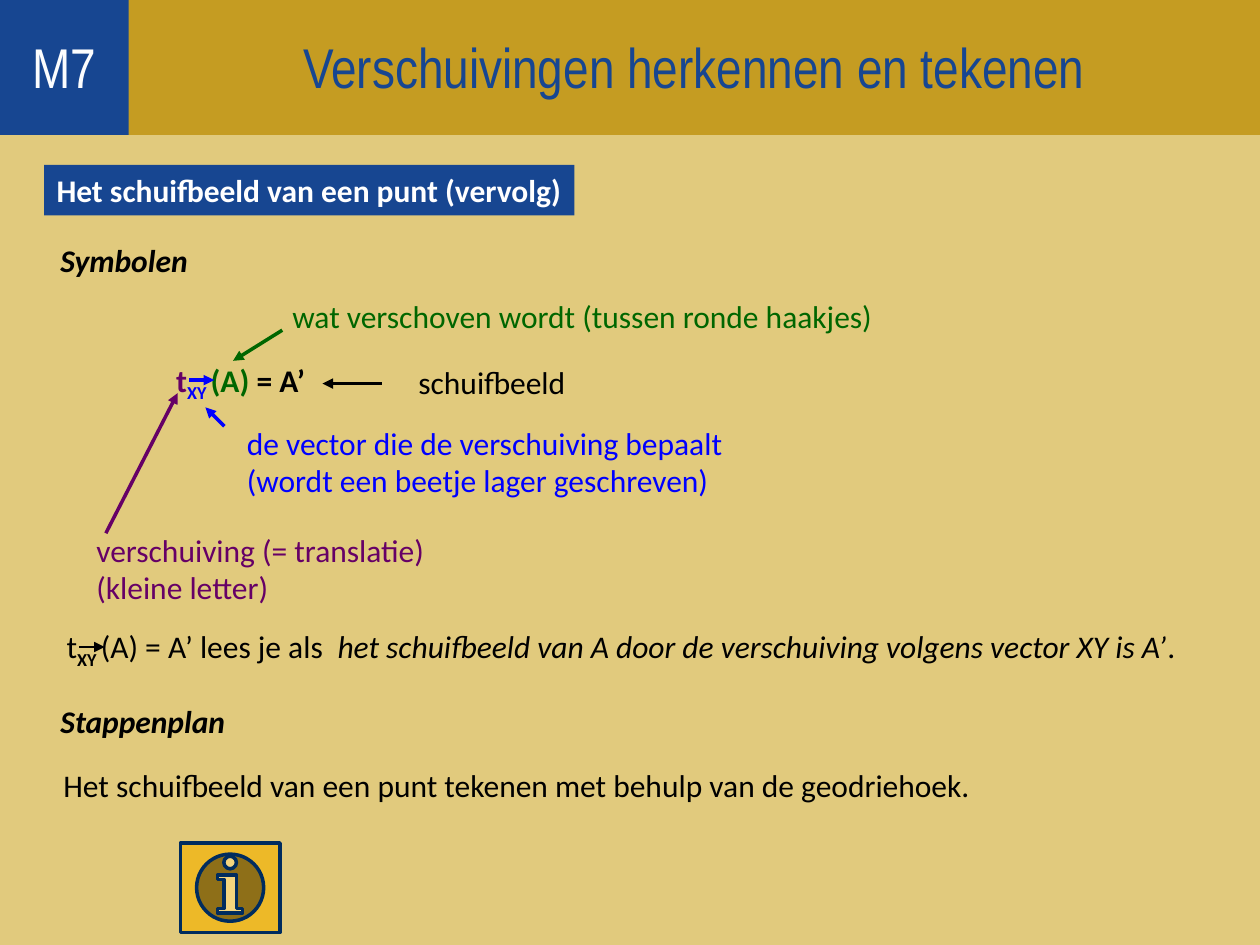
import pptx
import pptx.dml.color
import pptx.enum.shapes
import pptx.enum.text
import pptx.oxml
import pptx.util
from pptx.oxml.ns import qn
from pptx.util import Pt

COLORS = {
    "sand": "E1CA7D", "gold": "C59C22", "navy": "174691", "white": "FFFFFF",
    "off_white": "FCFDFE", "black": "000000", "purple": "660066",
    "green": "006600", "blue": "0000FF", "button": "EDB928", "button_line": "002C5E",
}
LINE_HEIGHT = 28.8
SHAPES = pptx.enum.shapes.MSO_SHAPE


def rgb(name):
    return pptx.dml.color.RGBColor.from_string(COLORS[name])


def fill_with(shape, color):
    shape.fill.solid()
    shape.fill.fore_color.rgb = rgb(color)


def style(font, color, size=18, name="Calibri", bold=False, italic=False):
    font.name, font.size = name, Pt(size)
    font.bold, font.italic = bold, italic
    font.color.rgb = rgb(color)


def add_block(page, kind, left, top, width, height, fill):
    """Add a filled preset shape without outline or shadow."""
    block = page.shapes.add_shape(kind, Pt(left), Pt(top), Pt(width), Pt(height))
    block.shadow.inherit = False
    fill_with(block, fill)
    block.line.fill.background()
    return block


def add_label(page, left, top, width, lines, color="black", wrap=False, **look):
    height = LINE_HEIGHT + 21.6 * (len(lines) - 1)
    box = page.shapes.add_textbox(Pt(left), Pt(top), Pt(width), Pt(height))
    frame = box.text_frame
    frame.word_wrap = wrap
    frame.auto_size = pptx.enum.text.MSO_AUTO_SIZE.SHAPE_TO_FIT_TEXT
    frame.text = "\n".join(lines)
    for para in frame.paragraphs:
        style(para.font, color, **look)
    return box


def add_runs(para, runs):
    """Add (text, color, look, baseline) runs; baseline is in percent."""
    for text, color, look, baseline in runs:
        span = para.add_run()
        span.text = text
        style(span.font, color, **look)
        if baseline:
            span._r.get_or_add_rPr().set("baseline", str(baseline * 1000))


def add_arrow(page, start, end, color="black", weight=2):
    arrow = page.shapes.add_connector(
        pptx.enum.shapes.MSO_CONNECTOR.STRAIGHT, *(Pt(v) for v in start + end))
    arrow.line.color.rgb = rgb(color)
    arrow.line.width = Pt(weight)
    properties = arrow._element.spPr
    line = properties.find(qn("a:ln"))
    line.append(pptx.oxml.parse_xml(
        '<a:tailEnd xmlns:a="http://schemas.openxmlformats.org/drawingml/2006/main"'
        ' type="triangle"/>'))
    properties.append(properties.makeelement(qn("a:effectLst"), {}))


def add_formula(page, left, top, width, runs, color, weight):
    """Add a translation formula with the vector arrow above its subscript."""
    box = add_label(page, left, top, width, [""])
    add_runs(box.text_frame.paragraphs[0], runs)
    add_arrow(page, (left + 14.4, top + 14.7), (left + 28.8, top + 14.7), color, weight)


def add_header(page, left, top, width, height):
    badge_width = 73.5
    title = page.shapes.title
    title.left, title.top, title.width, title.height = map(Pt, (left, top, width, height))
    fill_with(title, "gold")
    badge = add_block(page, SHAPES.RECTANGLE, left, top, badge_width, height, "navy")
    for shape, text, color in ((title, "Verschuivingen herkennen en tekenen", "navy"),
                               (badge, "M7", "off_white")):
        frame = shape.text_frame
        frame.auto_size = pptx.enum.text.MSO_AUTO_SIZE.NONE
        frame.vertical_anchor = pptx.enum.text.MSO_ANCHOR.MIDDLE
        frame.text = text
        para = frame.paragraphs[0]
        para.alignment = pptx.enum.text.PP_ALIGN.CENTER
        style(para.font, color, size=32, name="Arial Narrow")
    title.text_frame.margin_left = Pt(badge_width + 7.2)


def add_section_banner(page, left, top, width, height):
    banner = add_block(page, SHAPES.RECTANGLE, left, top, width, height, "navy")
    frame = banner.text_frame
    frame.word_wrap = False
    frame.text = "Het schuifbeeld van een punt (vervolg)"
    para = frame.paragraphs[0]
    para.alignment = pptx.enum.text.PP_ALIGN.LEFT
    style(para.font, "white", bold=True)


def add_symbol_diagram(page, left, top):
    """Add the formula with an explaining label and arrow for each symbol."""
    notes = [
        (["verschuiving (= translatie)", "(kleine letter)"], "purple",
         (0, 133.5, 203), (12.5, 138.5), (53.5, 58.5)),
        (["wat verschoven wordt (tussen ronde haakjes)"], "green",
         (112, 0, 476), (113.3, 22.5), (85.2, 40)),
        (["de vector die de verschuiving bepaalt", "(wordt een beetje lager geschreven)"],
         "blue", (86, 72.3, 288), (80.2, 77.4), (69.4, 66.6)),
        (["schuifbeeld"], "black", (184, 37.8, 98.6), (170.2, 53), (136.3, 53)),
    ]
    for lines, color, (x, y, width), start, end in notes:
        add_label(page, left + x, top + y, width, lines, color, wrap=color == "green")
        add_arrow(page, (left + start[0], top + start[1]),
                  (left + end[0], top + end[1]), color)
    bold = {"bold": True}
    runs = [("t", "purple", bold, 0), ("XY ", "blue", bold, -25),
            ("(A)", "green", bold, 0), (" = A’", "black", bold, 0)]
    add_formula(page, left + 45.6, top + 36.3, 91.4, runs, "blue", 2)


def add_reading(page, left, top):
    """Add the line that tells how the formula is read aloud."""
    runs = [("t", "black", {}, 0), ("XY ", "black", {"bold": True}, -25),
            ("(A) = A’ lees je als", "black", {}, 0)]
    add_formula(page, left, top, 164, runs, "black", 1.5)
    sentence = add_label(page, left + 154.8, top, 495.4, [""])
    add_runs(sentence.text_frame.paragraphs[0], [
        ("het schuifbeeld van A door de verschuiving volgens vector XY is A’",
         "black", {"italic": True}, 0),
        (".", "black", {}, 0)])


def add_step_plan(page, left, top):
    add_label(page, left, top, 108.7, ["Stappenplan"], bold=True, italic=True)
    add_label(page, left + 1.7, top + 36.7, 536.4,
              ["Het schuifbeeld van een punt tekenen met behulp van de geodriehoek."])
    button = add_block(page, SHAPES.ACTION_BUTTON_INFORMATION,
                       left + 75.6, top + 84.2, 57, 51.1, "button")
    button.line.color.rgb = rgb("button_line")
    button.line.width = Pt(2)


def main():
    deck = pptx.Presentation()
    deck.slide_width, deck.slide_height = Pt(720), Pt(540)
    page = deck.slides.add_slide(deck.slide_layouts[5])
    fill_with(page.background, "sand")
    add_header(page, 0, -1.4, 720, 78.5)
    add_section_banner(page, 25.2, 94.3, 303.1, LINE_HEIGHT)
    add_label(page, 27.4, 134, 87.8, ["Symbolen"], bold=True, italic=True)
    add_symbol_diagram(page, 48, 166.2)
    add_reading(page, 31, 355)
    add_step_plan(page, 27.4, 397.5)
    deck.save("out.pptx")


if __name__ == "__main__":
    main()
